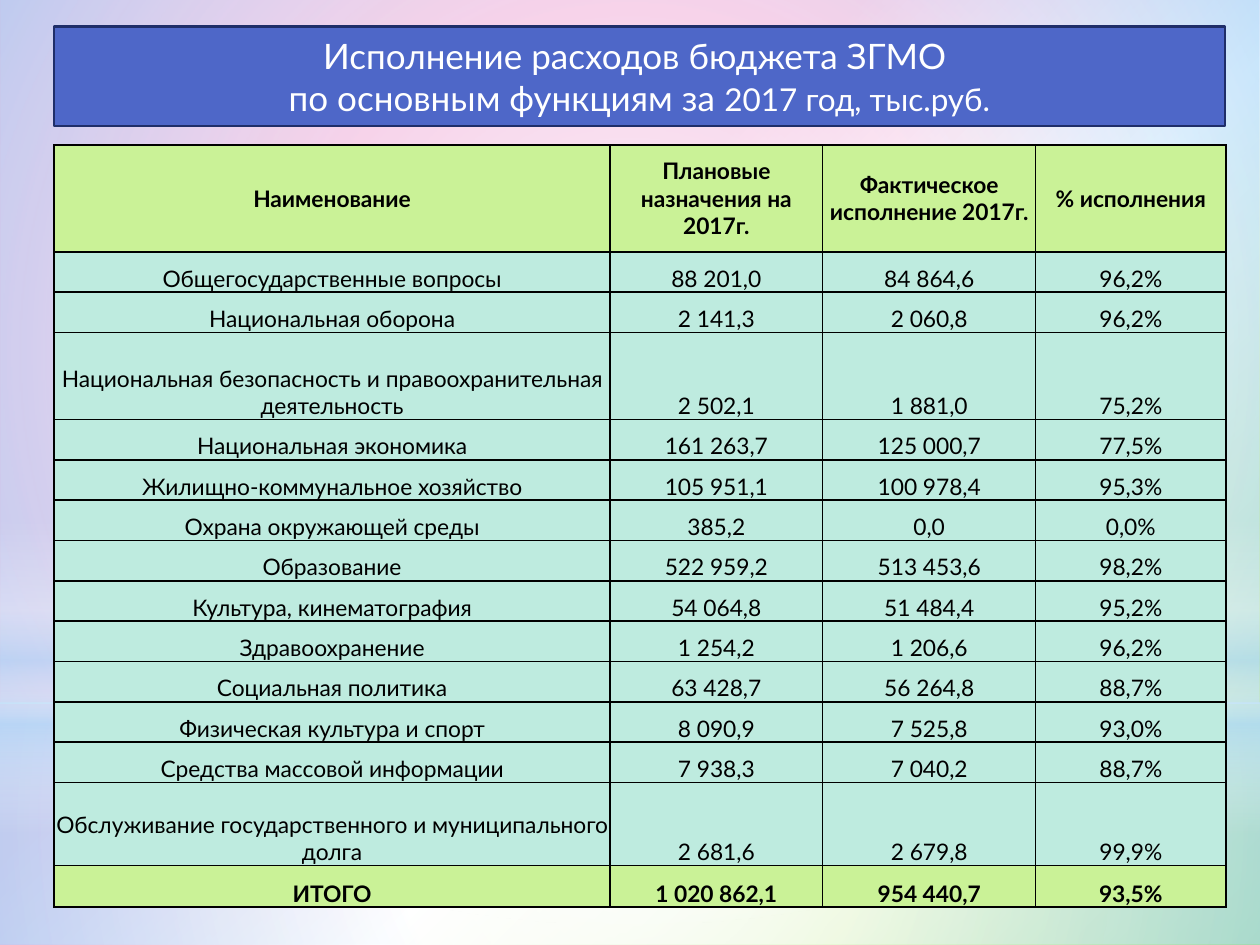
from pptx import Presentation
from pptx.dml.color import RGBColor
from pptx.enum.shapes import MSO_SHAPE as Preset
from pptx.enum.text import MSO_ANCHOR as Anchor, MSO_AUTO_SIZE as AutoSize, PP_ALIGN as Align
from pptx.oxml import parse_xml
from pptx.oxml.ns import nsdecls, qn
from pptx.util import Inches, Pt

WHITE = RGBColor(0xFF, 0xFF, 0xFF)
BLACK = RGBColor(0x00, 0x00, 0x00)
PINK = RGBColor(0xEA, 0x8A, 0xC8)
GREEN = RGBColor(0x81, 0xD3, 0x1A)
SKY = RGBColor(0xB4, 0xDC, 0xFA)
BLUE = RGBColor(0x4E, 0x67, 0xC8)
NAVY = RGBColor(0x1F, 0x2E, 0x69)
LIME = RGBColor(0xCA, 0xF2, 0x97)
MINT = RGBColor(0xBE, 0xEB, 0xDF)

LEFT, WIDTH = 4.3, 92.9
COLUMN_WIDTHS = [44.1, 16.9, 16.9, 15.1]
ROW_HEIGHT = 4.27
SPECIAL_HEIGHTS = {0: 11.33, 3: 9.2, 13: 8.8, 14: 4.4}

BUDGET_ROWS = [
    ("Наименование", "Плановые назначения на 2017г.", "Фактическое исполнение 2017г.", "% исполнения"),
    ("Общегосударственные вопросы", "88 201,0", "84 864,6", "96,2%"),
    ("Национальная оборона", "2 141,3", "2 060,8", "96,2%"),
    ("Национальная безопасность и правоохранительная деятельность", "2 502,1", "1 881,0", "75,2%"),
    ("Национальная экономика", "161 263,7", "125 000,7", "77,5%"),
    ("Жилищно-коммунальное хозяйство", "105 951,1", "100 978,4", "95,3%"),
    ("Охрана окружающей среды", "385,2", "0,0", "0,0%"),
    ("Образование", "522 959,2", "513 453,6", "98,2%"),
    ("Культура, кинематография", "54 064,8", "51 484,4", "95,2%"),
    ("Здравоохранение", "1 254,2", "1 206,6", "96,2%"),
    ("Социальная политика", "63 428,7", "56 264,8", "88,7%"),
    ("Физическая культура и спорт", "8 090,9", "7 525,8", "93,0%"),
    ("Средства массовой информации", "7 938,3", "7 040,2", "88,7%"),
    ("Обслуживание государственного и муниципального долга", "2 681,6", "2 679,8", "99,9%"),
    ("ИТОГО", "1 020 862,1", "954 440,7", "93,5%"),
]
TITLE_LINES = [
    [("Исполнение расходов бюджета ЗГМО ", 20)],
    [("по основным функциям за ", 20), ("2017 год, тыс.руб.", 18)],
]


def gradient(stops, angle=None):
    stop_xml = "".join(
        f'<a:gs pos="{position * 1000}"><a:srgbClr val="{color}">'
        f'<a:alpha val="{opacity * 1000}"/></a:srgbClr></a:gs>'
        for position, color, opacity in stops
    )
    if angle is None:
        direction = ('<a:path path="circle"><a:fillToRect l="50000" t="50000" '
                     'r="50000" b="50000"/></a:path>')
    else:
        direction = f'<a:lin ang="{angle * 60000}" scaled="0"/>'
    return parse_xml(f'<a:gradFill {nsdecls("a")} rotWithShape="1">'
                     f'<a:gsLst>{stop_xml}</a:gsLst>{direction}</a:gradFill>')


class BudgetSlide:
    font_name = "Lato"
    table_size = 13
    border_width = 1

    def __init__(self, presentation):
        self.page_width = presentation.slide_width
        self.page_height = presentation.slide_height
        self.slide = presentation.slides.add_slide(presentation.slide_layouts[5])

    def across(self, percent):
        return round(self.page_width * percent / 100)

    def down(self, percent):
        return round(self.page_height * percent / 100)

    def box(self, left, top, width, height):
        return self.across(left), self.down(top), self.across(width), self.down(height)

    def format_run(self, run, size, color, bold=False):
        run.font.name = self.font_name
        run.font.size = Pt(size)
        run.font.bold = bold
        run.font.color.rgb = color

    def background(self, stops, angle):
        self.slide.background.fill.solid()
        properties = self.slide.element.find(".//" + qn("p:bgPr"))
        properties.replace(properties.find(qn("a:solidFill")), gradient(stops, angle))

    def glow(self, preset, area, stops, angle=None):
        shape = self.slide.shapes.add_shape(preset, *self.box(*area))
        shape.shadow.inherit = False
        shape.line.fill.background()
        shape.fill.solid()
        properties = shape.element.spPr
        properties.replace(properties.find(qn("a:solidFill")), gradient(stops, angle))

    def border(self, cell):
        properties = cell._tc.get_or_add_tcPr()
        for index, side in enumerate(("lnL", "lnR", "lnT", "lnB")):
            properties.insert(index, parse_xml(
                f'<a:{side} {nsdecls("a")} w="{Pt(self.border_width)}"><a:solidFill>'
                f'<a:srgbClr val="{BLACK}"/></a:solidFill></a:{side}>'))

    def fill_cell(self, cell, text, color, bold, anchor):
        cell.text_frame.text = text
        cell.margin_left = cell.margin_right = cell.margin_top = cell.margin_bottom = 0
        cell.vertical_anchor = anchor
        cell.fill.solid()
        cell.fill.fore_color.rgb = color
        self.border(cell)
        paragraph = cell.text_frame.paragraphs[0]
        paragraph.alignment = Align.CENTER
        self.format_run(paragraph.runs[0], self.table_size, BLACK, bold)

    def table(self, top, rows):
        heights = [SPECIAL_HEIGHTS.get(index, ROW_HEIGHT) for index in range(len(rows))]
        area = self.box(LEFT, top, sum(COLUMN_WIDTHS), sum(heights))
        table = self.slide.shapes.add_table(len(rows), len(COLUMN_WIDTHS), *area).table
        table.first_row = table.horz_banding = False
        for column, width in zip(table.columns, COLUMN_WIDTHS):
            column.width = self.across(width)
        for index, (row, height, texts) in enumerate(zip(table.rows, heights, rows)):
            row.height = self.down(height)
            emphasized = index in (0, len(rows) - 1)
            anchor = Anchor.MIDDLE if index == 0 else Anchor.BOTTOM
            for cell, text in zip(row.cells, texts):
                self.fill_cell(cell, text, LIME if emphasized else MINT, emphasized, anchor)

    def title(self, area, lines):
        title = self.slide.shapes.title
        title.left, title.top, title.width, title.height = self.box(*area)
        title.element.spPr.append(parse_xml(
            f'<a:prstGeom {nsdecls("a")} prst="roundRect"><a:avLst/></a:prstGeom>'))
        title.fill.solid()
        title.fill.fore_color.rgb = BLUE
        title.line.color.rgb = NAVY
        title.line.width = Pt(1.25)
        frame = title.text_frame
        frame.word_wrap = True
        frame.auto_size = AutoSize.NONE
        frame.vertical_anchor = Anchor.MIDDLE
        frame.text = "\n".join("" for _ in lines)
        for paragraph, pieces in zip(frame.paragraphs, lines):
            paragraph.alignment = Align.CENTER
            for text, size in pieces:
                run = paragraph.add_run()
                run.text = text
                self.format_run(run, size, WHITE)
        title.element.getparent().append(title.element)


def main():
    presentation = Presentation()
    presentation.slide_width = Inches(10)
    presentation.slide_height = Inches(7.5)
    page = BudgetSlide(presentation)
    page.background([(39, PINK, 100), (60, WHITE, 100), (100, GREEN, 100)], 45)
    page.glow(Preset.RECTANGLE, (0, 74.4, 100, 25.6),
              [(0, WHITE, 91), (37, WHITE, 76), (100, SKY, 79)])
    page.glow(Preset.RECTANGLE, (0, 0, 100, 74.4),
              [(0, WHITE, 89), (48, WHITE, 62), (100, SKY, 79)])
    page.glow(Preset.RECTANGLE, (0, 54.93, 100, 33.33),
              [(0, WHITE, 0), (29, WHITE, 30), (45, SKY, 40),
               (55, WHITE, 26), (65, SKY, 60), (100, WHITE, 0)], 90)
    page.glow(Preset.OVAL, (0, 23.33, 100, 74.4), [(0, WHITE, 100), (56, WHITE, 0)])
    page.table(15.33, BUDGET_ROWS)
    page.title((LEFT, 2.8, WIDTH, 10.53), TITLE_LINES)
    presentation.save("out.pptx")


if __name__ == "__main__":
    main()
